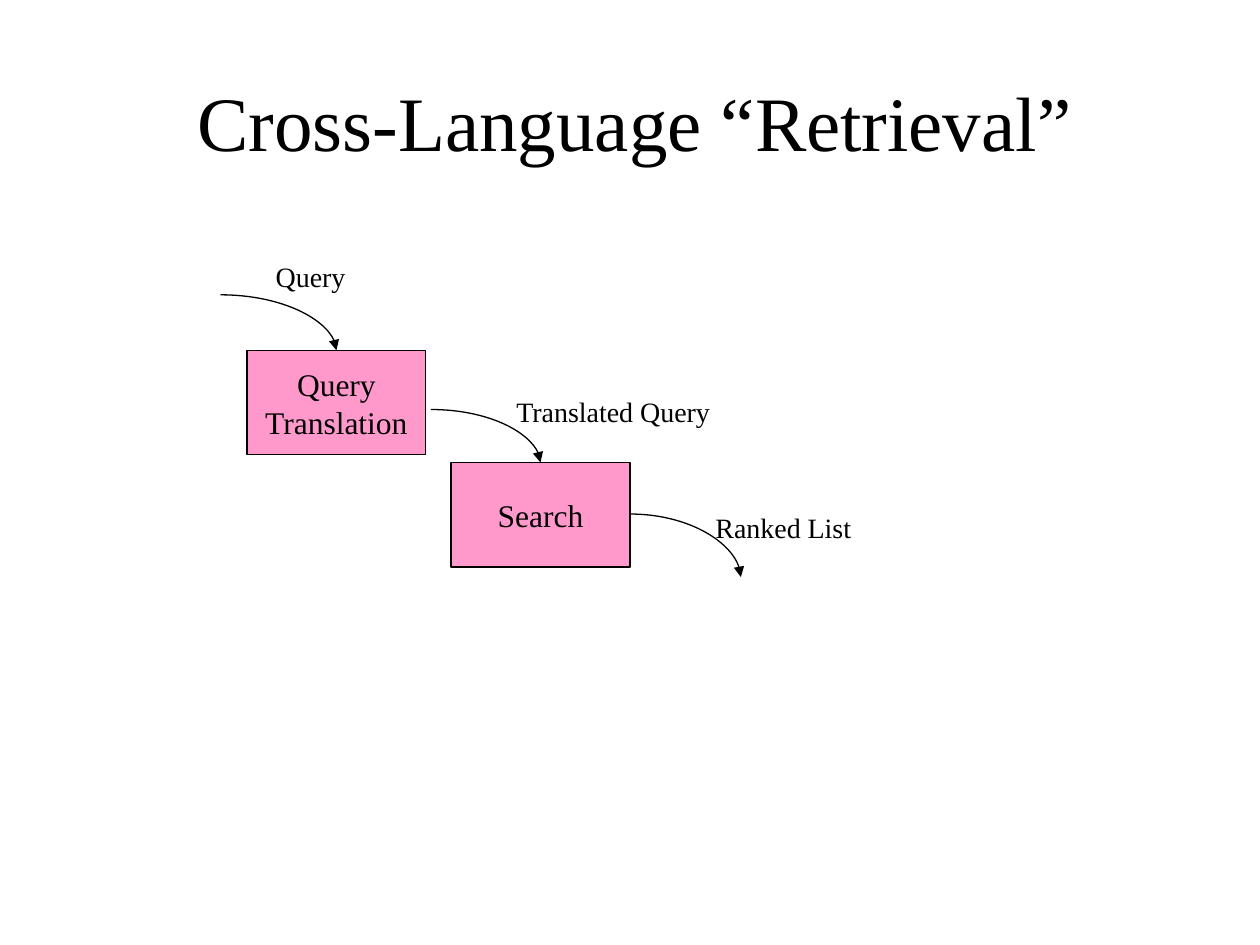
import lxml.etree
import pptx
import pptx.util
import pptx.dml.color
import pptx.enum.shapes
import pptx.enum.text
import pptx.oxml.ns

Inches = pptx.util.Inches
ALIGN = pptx.enum.text.PP_ALIGN
ANCHOR = pptx.enum.text.MSO_ANCHOR
FONT = "Times New Roman"
COLORS = {"ink": "000000", "box": "FF99CC"}

TITLE = ("Cross-Language “Retrieval”", (0.58, 0.33, 8.92, 1.25))
SIZE = (1.42, 0.83)
BOXES = [
    ("Query\nTranslation", (1.96, 2.78)),
    ("Search", (3.58, 3.67)),
]
ARROWS = [
    ((1.75, 2.34), (2.67, 2.78)),
    ((3.42, 3.25), (4.29, 3.67)),
    ((5, 4.08), (5.88, 4.58)),
]
LABELS = [
    ("Query", (2.09, 2.01, 0.76, 0.37)),
    ("Translated Query", (4, 3.08, 1.75, 0.37)),
    ("Ranked List", (5.58, 4, 1.28, 0.37)),
]


def color(name):
    return pptx.dml.color.RGBColor.from_string(COLORS[name])


def write(shape, text, size, align=ALIGN.CENTER, anchor=ANCHOR.MIDDLE, wrap=False):
    frame = shape.text_frame
    frame.text = text
    frame.word_wrap = wrap
    frame.vertical_anchor = anchor
    for par in frame.paragraphs:
        par.alignment = align
        for run in par.runs:
            run.font.name = FONT
            run.font.size = pptx.util.Pt(size)
            run.font.color.rgb = color("ink")


def outline(shape):
    shape.line.color.rgb = color("ink")
    shape.line.width = pptx.util.Pt(0.75)


def add_box(slide, text, place):
    box = slide.shapes.add_shape(
        pptx.enum.shapes.MSO_SHAPE.RECTANGLE, *map(Inches, place + SIZE))
    box.shadow.inherit = False
    box.fill.solid()
    box.fill.fore_color.rgb = color("box")
    outline(box)
    write(box, text, 18)


def add_arrow(slide, start, end):
    arrow = slide.shapes.add_connector(
        pptx.enum.shapes.MSO_CONNECTOR.CURVE, *map(Inches, start + end))
    outline(arrow)
    qn = pptx.oxml.ns.qn
    props = arrow.element.find(qn("p:spPr"))
    props.find(qn("a:prstGeom")).set("prst", "curvedConnector2")
    line = props.find(qn("a:ln"))
    lxml.etree.SubElement(line, qn("a:tailEnd"), type="triangle")
    lxml.etree.SubElement(props, qn("a:effectLst"))


def main():
    deck = pptx.Presentation()
    deck.slide_width, deck.slide_height = Inches(10), Inches(7.5)
    slide = deck.slides.add_slide(deck.slide_layouts[6])

    text, area = TITLE
    write(slide.shapes.add_textbox(*map(Inches, area)), text, 44, wrap=True)
    for text, place in BOXES:
        add_box(slide, text, place)
    for start, end in ARROWS:
        add_arrow(slide, start, end)
    for text, area in LABELS:
        label = slide.shapes.add_textbox(*map(Inches, area))
        write(label, text, 16, ALIGN.LEFT, ANCHOR.TOP)

    deck.save("out.pptx")


if __name__ == "__main__":
    main()
